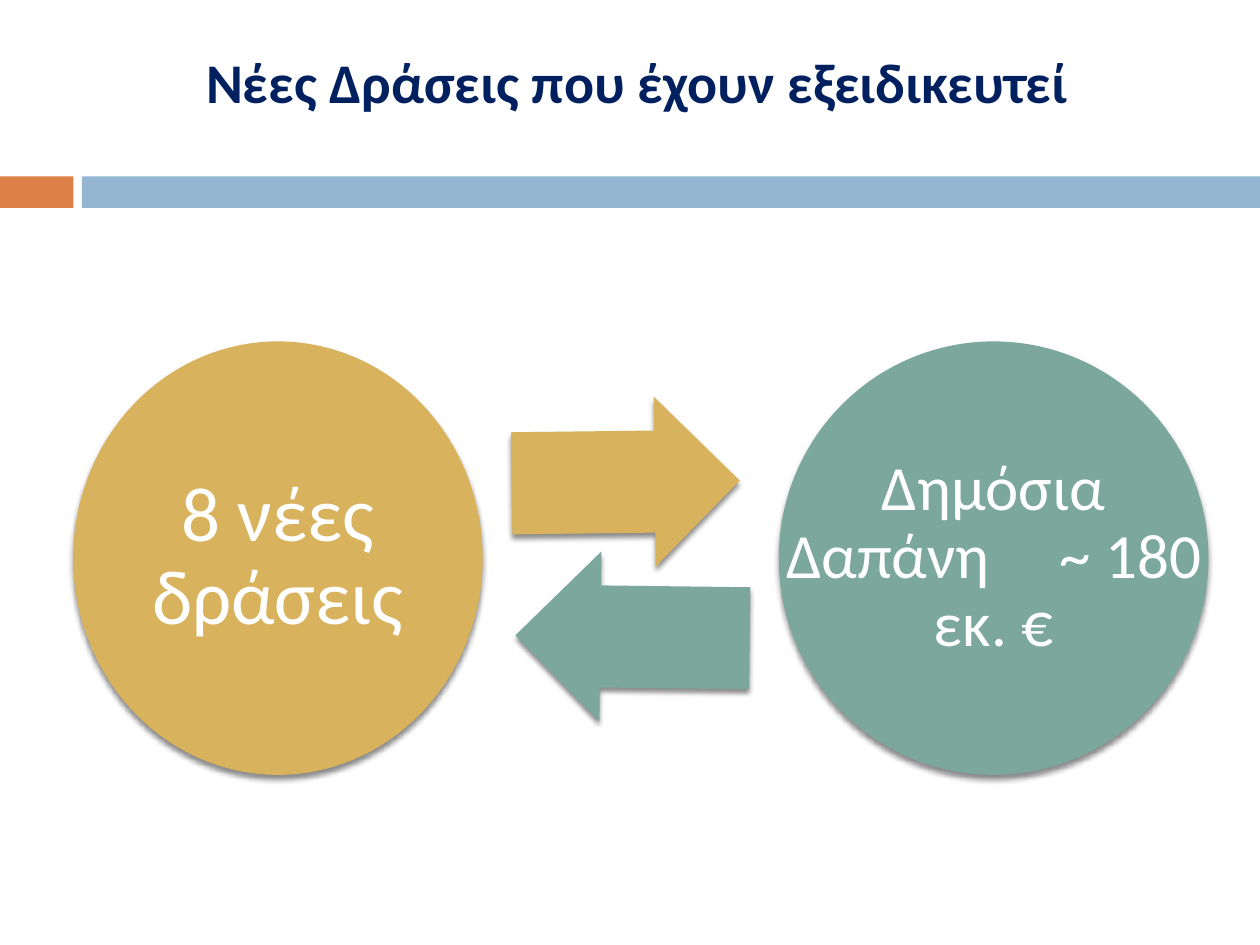
from lxml import etree
from pptx import Presentation
from pptx.dml.color import RGBColor
from pptx.enum import shapes, text
from pptx.oxml import ns
from pptx.util import Pt

HUES = {"navy": "002060", "rust": "DD8047", "blue": "94B6D2",
        "gold": "D8B25C", "teal": "7BA79D", "white": "FFFFFF", "black": "000000"}
FONT = "Calibri"
KIND = shapes.MSO_SHAPE


def style(run, size, hue, bold=False):
    run.font.name = FONT
    run.font.size = Pt(size)
    run.font.bold = bold
    run.font.color.rgb = RGBColor.from_string(HUES[hue])


def paint(home, kind, box, hue):
    """Add a plain filled shape without outline or shadow."""
    part = home.add_shape(kind, *map(Pt, box))
    part.shadow.inherit = False
    part.fill.solid()
    part.fill.fore_color.rgb = RGBColor.from_string(HUES[hue])
    part.line.fill.background()
    return part


def shade(part):
    """Cast a soft shadow straight down."""
    list_ = part.element.spPr.find(ns.qn("a:effectLst"))
    cast = etree.SubElement(list_, ns.qn("a:outerShdw"), blurRad=str(Pt(3)),
                            dist=str(Pt(2.4)), dir="5400000", rotWithShape="0")
    tint = etree.SubElement(cast, ns.qn("a:srgbClr"), val=HUES["black"])
    etree.SubElement(tint, ns.qn("a:alpha"), val="45000")


def head(slide, box):
    title = slide.shapes.title
    title.left, title.top, title.width, title.height = map(Pt, box)
    frame = title.text_frame
    frame.text = "Νέες Δράσεις που έχουν εξειδικευτεί "
    frame.auto_size = text.MSO_AUTO_SIZE.NONE
    frame.vertical_anchor = text.MSO_ANCHOR.MIDDLE
    para = frame.paragraphs[0]
    para.alignment = text.PP_ALIGN.CENTER
    style(para.runs[0], 32, "navy", True)


def band(slide, box):
    """Two-tone bar below the title."""
    left, top, width, height = box
    tab, gap = 42, 4.8
    paint(slide.shapes, KIND.RECTANGLE, (left, top, tab, height), "rust")
    paint(slide.shapes, KIND.RECTANGLE,
          (left + tab + gap, top, width - tab - gap, height), "blue")


def disc(home, box, hue, words, size, inset, gap=0):
    """Circle with a label; gap widens the space between its word groups."""
    shade(paint(home, KIND.OVAL, box, hue))
    frame = home.add_textbox(*map(Pt, box)).text_frame
    frame.word_wrap = True
    frame.vertical_anchor = text.MSO_ANCHOR.MIDDLE
    frame.margin_left = frame.margin_right = Pt(inset)
    frame.margin_top = frame.margin_bottom = Pt(inset)
    para = frame.paragraphs[0]
    para.alignment = text.PP_ALIGN.CENTER
    para.line_spacing = 0.9
    for i, word in enumerate(words):
        if i:
            space = para.add_run()
            space.text = " "
            space.font.element.set("spc", str(gap * 100)) if hasattr(
                space.font, "element") else space.font._element.set("spc", str(gap * 100))
        para.add_run().text = word
    for run in para.runs:
        style(run, size, "white")


def arrow(home, box, hue, turn):
    part = paint(home, KIND.RIGHT_ARROW, box, hue)
    part.adjustments[0], part.adjustments[1] = 0.6, 0.5
    part.rotation = turn
    shade(part)


def cycle(slide, box):
    """Two discs that feed each other through a pair of arrows."""
    left, top, width, height = box
    home = slide.shapes.add_group_shape().shapes
    wide = 245.5
    disc(home, (left, top, 234, height), "gold", ["8 νέες δράσεις"], 44, 4.3)
    arrow(home, (left + 250.6, top + 31.7, 130.3, 97.2), "gold", 359.3)
    disc(home, (left + width - wide, top, wide, height), "teal",
         ["Δημόσια Δαπάνη", "~ 180 εκ. €"], 36, 3, 32)
    arrow(home, (left + 252.7, top + 120.2, 133.9, 97.2), "teal", 180.7)


def main():
    deck = Presentation()
    deck.slide_width, deck.slide_height = Pt(720), Pt(540)
    slide = deck.slides.add_slide(deck.slide_layouts[5])
    band(slide, (0, 100.8, 720, 18))
    head(slide, (36, 9.4, 663.8, 73.4))
    cycle(slide, (41.8, 195.1, 648.7, 247.7))
    deck.save("out.pptx")


if __name__ == "__main__":
    main()
